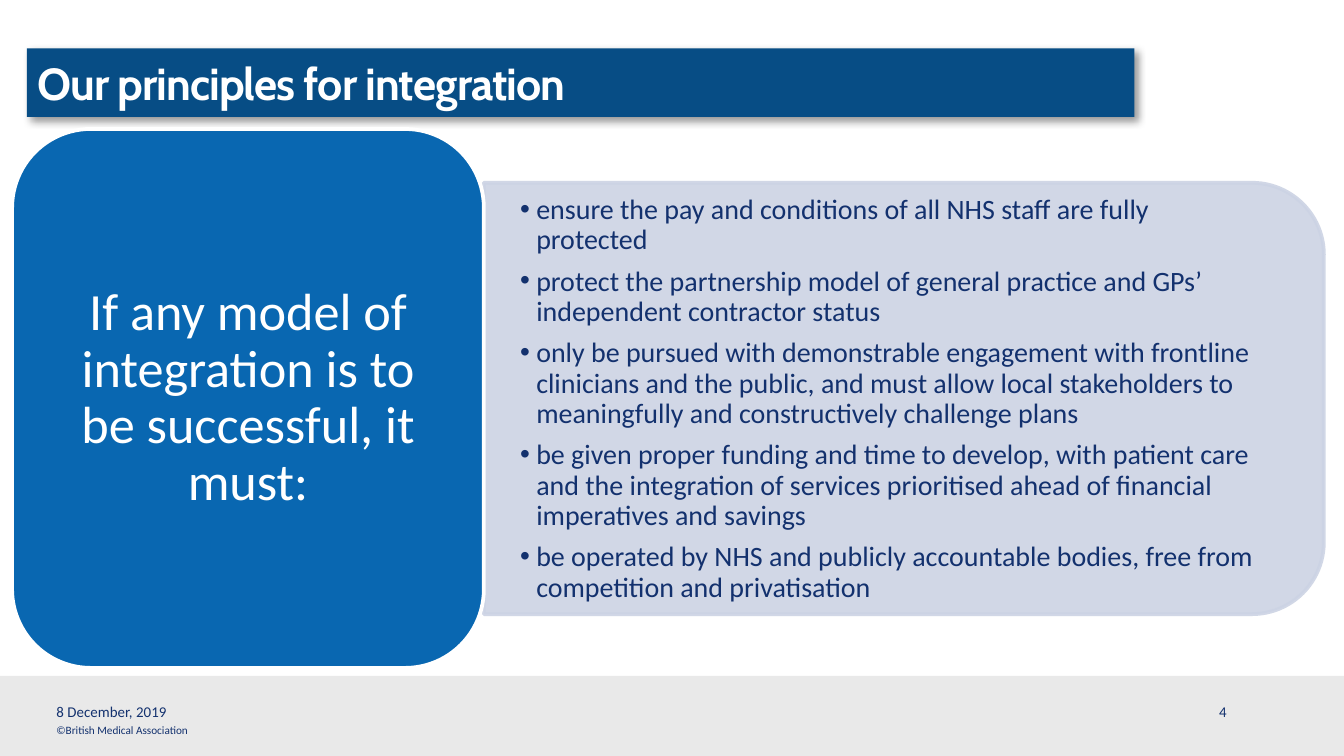
"""Build the slide on principles for integration: a lead card beside a list of conditions."""
from lxml import etree
from pptx import Presentation
from pptx.dml.color import RGBColor
from pptx.enum.shapes import MSO_SHAPE
from pptx.enum.text import MSO_ANCHOR, MSO_AUTO_SIZE, PP_ALIGN
from pptx.oxml.ns import qn
from pptx.util import Inches, Pt

RECT, CARD, TAB = MSO_SHAPE.RECTANGLE, MSO_SHAPE.ROUNDED_RECTANGLE, MSO_SHAPE.ROUND_2_SAME_RECTANGLE
MIDDLE, NO_FIT = MSO_ANCHOR.MIDDLE, MSO_AUTO_SIZE.NONE
LEFT, CENTER = PP_ALIGN.LEFT, PP_ALIGN.CENTER

THEME = {
    "navy": "13316E", "bar": "074D85", "card": "0967B1", "panel": "CCD3E4",
    "footer": "E9E9E9", "white": "FFFFFF", "shadow": "000000",
    "title": {"name": "Cabin", "size": Pt(24), "bold": True},
    "lead": {"name": "Calibri", "size": Pt(28)},
    "list": {"name": "Calibri", "size": Pt(15)},
    "small": {"name": "Calibri", "size": Pt(8)},
    "tiny": {"name": "Calibri", "size": Pt(6)},
}
CONDITIONS = [
    "ensure the pay and conditions of all NHS staff are fully protected",
    "protect the partnership model of general practice and GPs’ independent contractor status",
    "only be pursued with demonstrable engagement with frontline clinicians and the public, "
    "and must allow local stakeholders to meaningfully and constructively challenge plans",
    "be given proper funding and time to develop, with patient care and the integration of "
    "services prioritised ahead of financial imperatives and savings",
    "be operated by NHS and publicly accountable bodies, free from competition and privatisation",
]

prs = Presentation()
prs.slide_width, prs.slide_height = Inches(10), Inches(5.625)
UNIT = prs.slide_width / 100
s = prs.slides.add_slide(prs.slide_layouts[1])


def style(sp, box, fill=None, line=None):
    """Place a shape on the grid of 100 columns and set its fill and line."""
    sp.left, sp.top, sp.width, sp.height = (round(v * UNIT) for v in box)
    sp.shadow.inherit = False
    for part, color in ((sp.fill, fill), (sp.line.fill, line)):
        if color:
            part.solid()
            part.fore_color.rgb = RGBColor.from_string(THEME[color])
        else:
            part.background()
    if line:
        sp.line.width = Pt(2)
    return sp


def write(sp, lines, font, color, inset=(0, 0), align=LEFT, spacing=1.0, after=0, bullet=False):
    """Fill a shape with one paragraph per line."""
    tf = sp.text_frame
    x, y = (Inches(v) for v in inset)
    frame = {"word_wrap": True, "auto_size": NO_FIT, "vertical_anchor": MIDDLE,
             "margin_left": x, "margin_right": x, "margin_top": y, "margin_bottom": y}
    for key, value in frame.items():
        setattr(tf, key, value)
    for i, text in enumerate(lines):
        p = tf.add_paragraph() if i else tf.paragraphs[0]
        if bullet:
            pPr = p._p.get_or_add_pPr()
            pPr.set("marL", str(Inches(0.12)))
            pPr.set("indent", str(-Inches(0.12)))
            etree.SubElement(pPr, qn("a:buChar"), char="•")
        layout = {"alignment": align, "line_spacing": spacing,
                  "space_before": Pt(0), "space_after": Pt(after)}
        for key, value in layout.items():
            setattr(p, key, value)
        r = p.add_run()
        r.text = text
        for key, value in THEME[font].items():
            setattr(r.font, key, value)
        r.font.color.rgb = RGBColor.from_string(THEME[color])


style(s.shapes.add_shape(RECT, 0, 0, 0, 0), (0, 50.3, 100, 5.95), "footer")
footers = [
    ("©British Medical Association", "tiny", (4.2, 53.8, 20.7, 1)),
    ("8 December, 2019", "small", (4.2, 52.3, 31.7, 1.3)),
    ("4", "small", (90.7, 52.3, 2.8, 1.3)),
]
for text, font, box in footers:
    write(style(s.shapes.add_textbox(0, 0, 0, 0), box), [text], font, "navy")

title = style(s.shapes.title, (2, 3.6, 82.4, 5.1), "bar")
write(title, ["Our principles for integration"], "title", "white", (0.08, 0.08))
title.text_frame.paragraphs[0].runs[0].font._element.set("spc", "-50")
effects = title._element.spPr.find(qn("a:effectLst"))
shadow = etree.SubElement(effects, qn("a:outerShdw"), blurRad=str(Pt(4)), dist=str(Pt(3)),
                          dir="2700000", algn="tl", rotWithShape="0")
tint = etree.SubElement(shadow, qn("a:srgbClr"), val=THEME["shadow"])
etree.SubElement(tint, qn("a:alpha"), val="40000")

panel = style(s.shapes.add_shape(TAB, 0, 0, 0, 0), (51.2, -1.6, 32.1, 62.5), "panel", "panel")
panel.rotation = 90
for color in panel._element.spPr.iter(qn("a:srgbClr")):
    etree.SubElement(color, qn("a:alpha"), val="90000")

body = style(s.placeholders[1], (36, 15.2, 60.9, 29))
write(body, CONDITIONS, "list", "navy", (0.27, 0.14), spacing=0.9, after=6, bullet=True)
s.shapes._spTree.append(body._element)

card = style(s.shapes.add_shape(CARD, 0, 0, 0, 0), (0.9, 9.6, 35.1, 40.1), "card", "white")
write(card, ["If any model of integration is to be successful, it must:"], "lead", "white",
      (0.12, 0.06), CENTER, 0.9)

prs.save("out.pptx")
